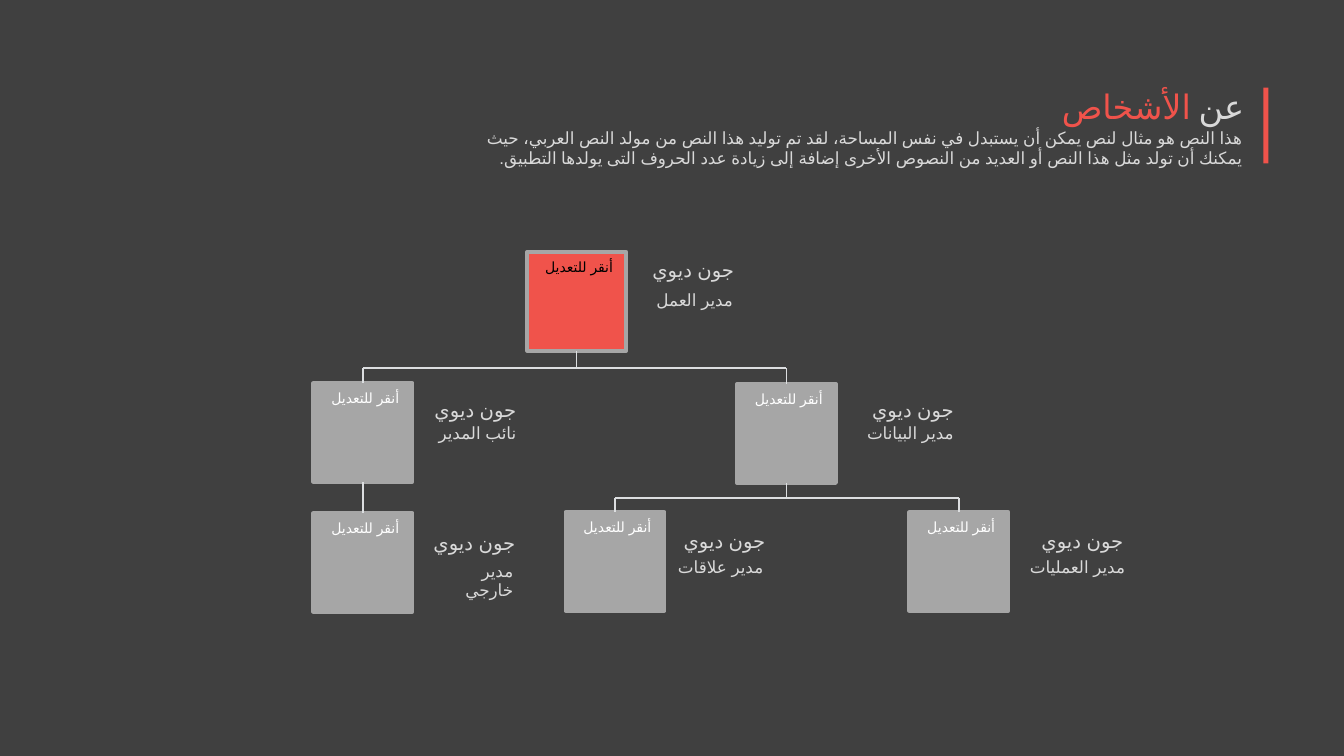
from pptx import Presentation
from pptx.dml.color import RGBColor
from pptx.enum.lang import MSO_LANGUAGE_ID as LANGUAGE
from pptx.enum.shapes import MSO_CONNECTOR, MSO_SHAPE
from pptx.enum.text import MSO_ANCHOR, MSO_AUTO_SIZE, PP_ALIGN
from pptx.oxml.ns import qn
from pptx.util import Inches, Pt
from lxml.etree import SubElement

COLORS = {
    "background": "404040",
    "accent": "F0534B",
    "square": "A6A6A6",
    "line": "DCDEE0",
    "text": "D9D9D9",
    "white": "FFFFFF",
    "black": "000000",
}
SIDE = 0.98
TOP, BOTTOM = 0, 2
NAME = "جون ديوي"
PROMPT = "أنقر للتعديل"
INTRO = (
    "هذا النص هو مثال لنص يمكن أن يستبدل في نفس المساحة، لقد تم توليد هذا النص من مولد النص العربي، حيث "
    "يمكنك أن تولد مثل هذا النص أو العديد من النصوص الأخرى إضافة إلى زيادة عدد الحروف التى يولدها التطبيق."
)
# key: (square left and top, name box, role box, role)
PEOPLE = {
    "head": ((5.23, 2.5), (6.34, 2.54, 1.04, 0.3), (6.33, 2.85, 1.04, 0.25), "مدير العمل"),
    "deputy": ((3.11, 3.8), (4.15, 3.92, 1.07, 0.25), (4.15, 4.17, 1.07, 0.2), "نائب المدير"),
    "data": ((7.31, 3.81), (8.26, 3.92, 1.3, 0.32), (8.26, 4.17, 1.3, 0.26), "مدير البيانات"),
    "external": ((3.11, 5.09), (3.98, 5.24, 1.23, 0.25), (4.18, 5.54, 1.01, 0.17), "مدير خارجي"),
    "relations": ((5.61, 5.08), (6.62, 5.22, 1.07, 0.27), (6.62, 5.5, 1.05, 0.2), "مدير علاقات"),
    "operations": ((9.02, 5.08), (10.1, 5.22, 1.14, 0.24), (10.1, 5.5, 1.16, 0.47), "مدير العمليات"),
}


def rgb(name):
    return RGBColor.from_string(COLORS[name])


def write(frame, spans, size, font="Arial", spacing=None):
    """Fill a frame with one right-to-left paragraph of (text, colour) spans."""
    para = frame.paragraphs[0]
    para.alignment = PP_ALIGN.RIGHT
    para.line_spacing = spacing
    para._p.get_or_add_pPr().set("rtl", "1")
    for text, color in spans:
        span = para.add_run()
        span.text = text
        span.font.size = Pt(size)
        span.font.name = font
        span.font.language_id = LANGUAGE.ARABIC
        span.font.color.rgb = rgb(color)
        SubElement(span._r.get_or_add_rPr(), qn("a:cs")).set("typeface", font)


def add_text(page, place, spans, wrap=True, grow=False, **text_format):
    box = page.shapes.add_textbox(*map(Inches, place))
    frame = box.text_frame
    frame.word_wrap = wrap
    frame.auto_size = MSO_AUTO_SIZE.SHAPE_TO_FIT_TEXT if grow else MSO_AUTO_SIZE.NONE
    write(frame, spans, **text_format)


def add_rectangle(page, place, fill, outline=None):
    shape = page.shapes.add_shape(MSO_SHAPE.RECTANGLE, *map(Inches, place))
    shape.shadow.inherit = False
    shape.fill.solid()
    shape.fill.fore_color.rgb = rgb(fill)
    if outline:
        shape.line.color.rgb = rgb(outline)
        shape.line.width = Pt(3)
    else:
        shape.line.fill.background()
    return shape


def add_square(page, left, top, fill, color):
    square = add_rectangle(page, (left, top, SIDE, SIDE), fill, "square")
    frame = square.text_frame
    frame.word_wrap = True
    frame.vertical_anchor = MSO_ANCHOR.TOP
    frame.margin_left = frame.margin_right = Inches(0.13)
    frame.margin_top = frame.margin_bottom = Inches(0.06)
    write(frame, [(PROMPT, color)], size=10)
    return square


def add_person(page, key):
    corner, name_place, role_place, role = PEOPLE[key]
    fill, color = ("accent", "black") if key == "head" else ("square", "white")
    square = add_square(page, *corner, fill, color)
    add_text(page, name_place, [(NAME, "text")], size=14, spacing=0.9)
    add_text(page, role_place, [(role, "text")], size=12, spacing=0.9)
    return square


def add_line(page, start_x, start_y, end_x, end_y):
    line = page.shapes.add_connector(MSO_CONNECTOR.STRAIGHT, start_x, start_y, end_x, end_y)
    line.line.color.rgb = rgb("line")
    line.line.width = Pt(1)
    SubElement(line._element.spPr, qn("a:effectLst"))
    return line


def middle(square):
    return square.left + square.width // 2


def add_branch(page, parent, children, bar_y):
    """Join a parent to its children through a horizontal bar."""
    bar_y = Inches(bar_y)
    centers = [middle(child) for child in children]
    add_line(page, min(centers), bar_y, max(centers), bar_y)
    stem = add_line(page, middle(parent), parent.top + parent.height, middle(parent), bar_y)
    stem.begin_connect(parent, BOTTOM)
    for child, center in zip(children, centers):
        add_line(page, center, bar_y, center, child.top).end_connect(child, TOP)


def add_direct_link(page, parent, child):
    link = add_line(page, middle(parent), parent.top + parent.height, middle(child), child.top)
    link.begin_connect(parent, BOTTOM)
    link.end_connect(child, TOP)


def add_heading(page):
    add_rectangle(page, (12.53, 0.87, 0.05, 0.75), "accent")
    add_text(page, (10.28, 0.8, 2.16, 0.5), [("عن ", "text"), ("الأشخاص", "accent")],
             size=24, font="Calibri", wrap=False, grow=True)
    add_text(page, (4.65, 1.22, 7.78, 0.5), [(INTRO, "text")], size=12, grow=True)


def main():
    deck = Presentation()
    deck.slide_width, deck.slide_height = Inches(13.33), Inches(7.5)
    page = deck.slides.add_slide(deck.slide_layouts[6])
    page.background.fill.solid()
    page.background.fill.fore_color.rgb = rgb("background")

    add_heading(page)
    squares = {key: add_person(page, key) for key in PEOPLE}
    add_branch(page, squares["head"], [squares["deputy"], squares["data"]], 3.65)
    add_branch(page, squares["data"], [squares["relations"], squares["operations"]], 4.94)
    add_direct_link(page, squares["deputy"], squares["external"])
    deck.save("out.pptx")


if __name__ == "__main__":
    main()
